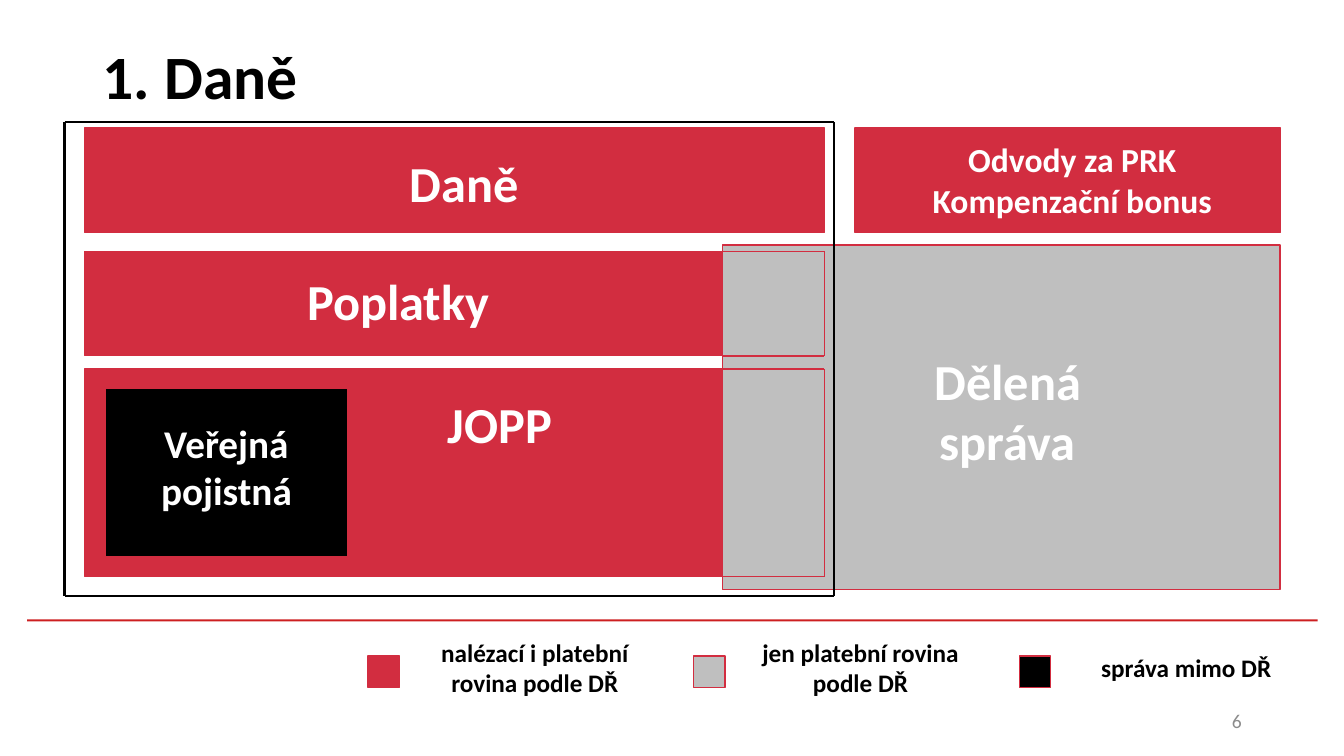
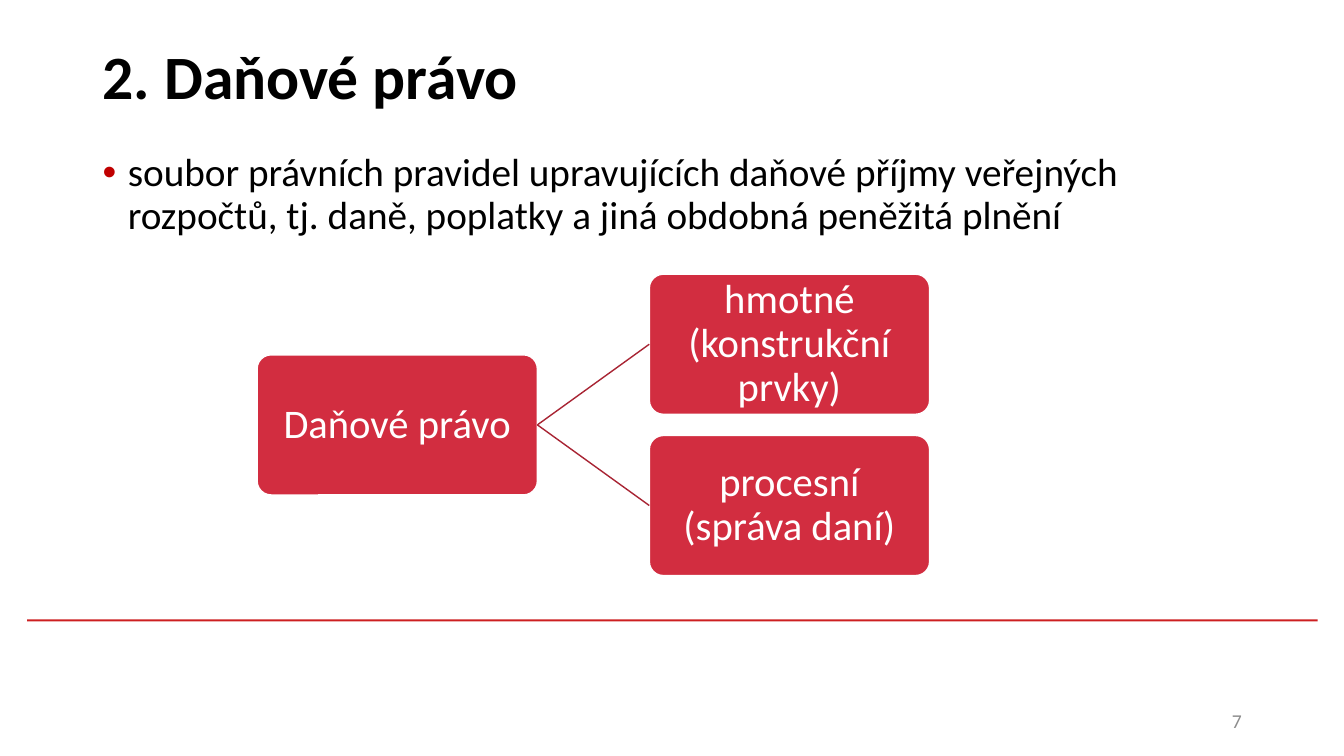
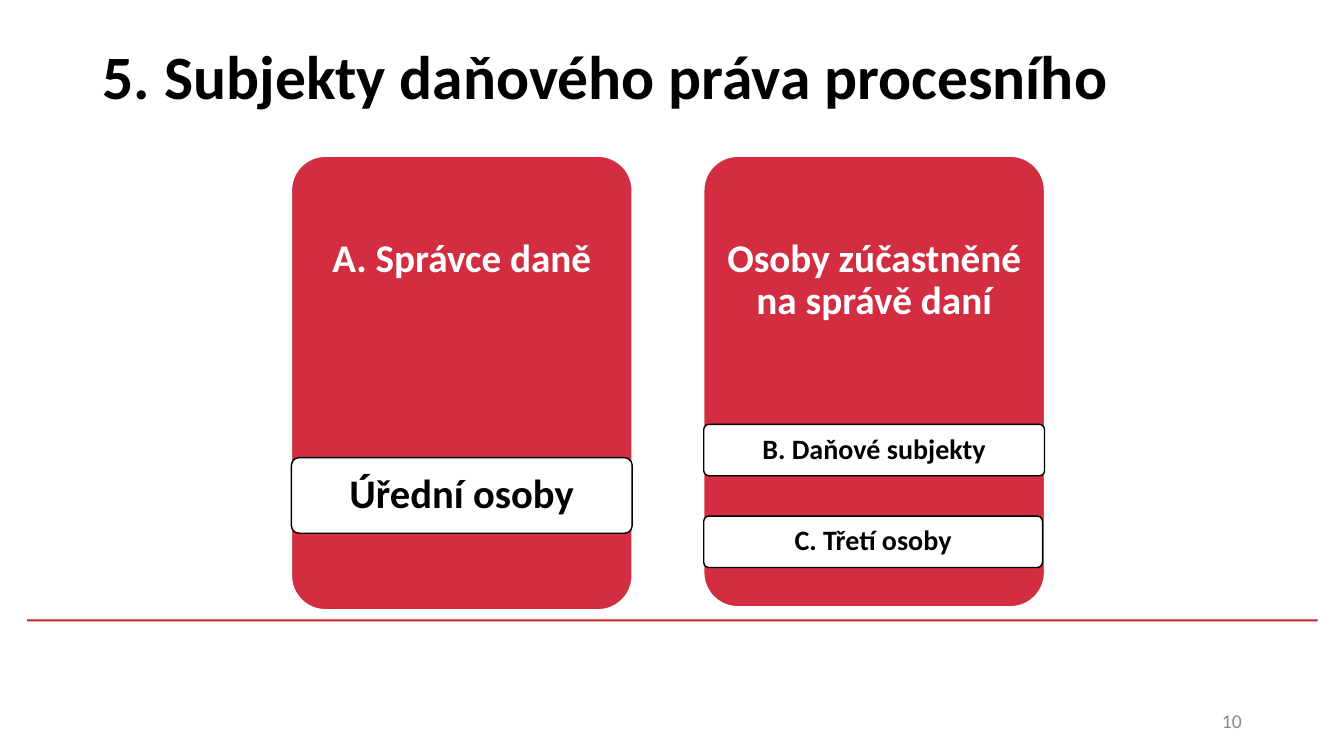
from lxml import etree
from pptx import Presentation, util as u
from pptx.dml.color import RGBColor
from pptx.enum import shapes, text
from pptx.oxml import ns

CELL = 0.1  # inches per grid column and row
RED, RULE, LINK = "D22D40", "CD1F21", "A82433"
GREY, BLACK, WHITE = "BFBFBF", "000000", "FFFFFF"
BULLET, NUMBER = "C00000", "8C8C8C"
RECT = shapes.MSO_SHAPE.RECTANGLE
ROUND = shapes.MSO_SHAPE.ROUNDED_RECTANGLE


def rgb(value):
    return RGBColor.from_string(value)


def cells(*counts):
    return [u.Inches(count * CELL) for count in counts]


def write(frame, content, size=28, color=WHITE, bold=False, align="CENTER",
          anchor="MIDDLE", spacing=None, insets=(1, 0.5, 1, 0.5), bullet=None):
    """Fill a text frame, one paragraph per line; insets run left, top, right, bottom."""
    frame.word_wrap = True
    frame.vertical_anchor = getattr(text.MSO_ANCHOR, anchor)
    (frame.margin_left, frame.margin_top,
     frame.margin_right, frame.margin_bottom) = cells(*insets)
    for index, line in enumerate(content.split("\n")):
        paragraph = frame.add_paragraph() if index else frame.paragraphs[0]
        paragraph.alignment = getattr(text.PP_ALIGN, align)
        if spacing:
            paragraph.line_spacing = spacing
        if bullet:
            add_bullet(paragraph, bullet)
        run = paragraph.add_run()
        run.text = line
        font = run.font
        font.name, font.size, font.bold = "Calibri", u.Pt(size), bold
        font.color.rgb = rgb(color)


def add_bullet(paragraph, color):
    properties = paragraph._p.get_or_add_pPr()
    properties.set("marL", str(u.Inches(0.25)))
    properties.set("indent", str(u.Inches(-0.25)))
    bullet_color = etree.SubElement(properties, ns.qn("a:buClr"))
    etree.SubElement(bullet_color, ns.qn("a:srgbClr"), val=color)
    etree.SubElement(properties, ns.qn("a:buFont"), typeface="Arial")
    etree.SubElement(properties, ns.qn("a:buChar"), char="•")


class Deck:
    """Shared style and the slide being built; places are in grid cells."""

    def __init__(self):
        self.file = Presentation()
        self.file.slide_width, self.file.slide_height = u.Inches(13.33), u.Inches(7.5)
        self.slide = None

    def start(self, title, number):
        """Open a slide with its rule, title and number."""
        self.slide = self.file.slides.add_slide(self.file.slide_layouts[6])
        self.box((2.7, 61.45, 128, 0.2), RULE)
        self.label((9.2, 0.2, 115, 14.5), title, size=44, color=BLACK, bold=True,
                   align="LEFT")
        self.label((94.15, 69.5, 30, 4), number, size=14, color=NUMBER, align="RIGHT")

    def box(self, place, fill, line=None, kind=RECT, content=None, **style):
        shape = self.slide.shapes.add_shape(kind, *cells(*place))
        shape.shadow.inherit = False
        if kind == ROUND:
            shape.adjustments[0] = 0.1
        shape.fill.solid()
        shape.fill.fore_color.rgb = rgb(fill)
        if line:
            shape.line.color.rgb = rgb(line)
            shape.line.width = u.Pt(1)
        else:
            shape.line.fill.background()
        if content:
            write(shape.text_frame, content, **style)
        return shape

    def label(self, place, content, **style):
        write(self.slide.shapes.add_textbox(*cells(*place)).text_frame, content, **style)

    def line(self, ends, color, width=1):
        """Draw a straight line; ends are left, top, right, bottom."""
        line = self.slide.shapes.add_connector(shapes.MSO_CONNECTOR.STRAIGHT, *cells(*ends))
        line.line.color.rgb = rgb(color)
        line.line.width = u.Pt(width)
        etree.SubElement(line._element.spPr, ns.qn("a:effectLst"))
        return line

    def outline(self, left, top, right, bottom, color, width=1):
        """Draw the four sides of an area as separate lines."""
        for ends in ((left, top, right, top), (right, top, right, bottom),
                     (left, bottom, right, bottom), (left, top, left, bottom)):
            self.line(ends, color, width)

    def link(self, parent, child):
        """Join the right side of parent to the left side of child."""
        line = self.line((0, 0, 0, 0), LINK)
        line.begin_connect(parent, 3)
        line.end_connect(child, 1)


def taxes(deck):
    deck.start("1. Daně", "6")
    split, inner_right = 71.65, 81.75
    rows = ((24.95, 35.3), (36.6, 57.2))
    deck.box((split, 24.3, 55.3, 34.2), GREY, RED)
    for top, bottom in rows:
        deck.box((8.4, top, split - 8.4, bottom - top), RED, RED)
    deck.box((8.4, 12.7, 73.4, 10.35), RED, RED)
    deck.box((84.8, 12.7, 42.2, 10.35), RED, RED)
    deck.box((10.4, 38.5, 24.1, 16.75), BLACK, RED)
    for place, content, size in (
            ((16.4, 14.55, 59.3, 7.1), "Daně", 36),
            ((16.4, 26.2, 46.2, 7.1), "Poplatky", 36),
            ((30.5, 38.45, 38.2, 7.1), "JOPP", 36),
            ((88.75, 13.25, 35.2, 9.1), "Odvody za PRK\nKompenzační bonus", 24),
            ((11.4, 41.1, 22.1, 10.4), "Veřejná pojistná", 28),
            ((85.35, 34.15, 29.2, 13.1), "Dělená správa", 36)):
        deck.label(place, content, size=size, bold=True)
    deck.outline(6.4, 12.1, 82.75, 59.15, BLACK, 1.5)
    for top, bottom in rows:
        deck.outline(split, top, inner_right, bottom, RED)

    legend = ((RED, "nalézací i platební rovina podle DŘ"),
              (GREY, "jen platební rovina podle DŘ"),
              (BLACK, "správa mimo DŘ"))
    for index, (fill, meaning) in enumerate(legend):
        left = 36.5 + 32.3 * index
        deck.box((left, 65.1, 3.1, 3.1), fill, RED)
        deck.label((left + 3.95, 62.65, 25.2, 7.1), meaning, size=18, color=BLACK,
                   bold=True)


def tax_law(deck):
    deck.start("2. Daňové právo", "7")
    deck.label((9.2, 14.7, 115, 45.7),
               "soubor právních pravidel upravujících daňové příjmy veřejných rozpočtů, "
               "tj. daně, poplatky a jiná obdobná peněžitá plnění",
               color=BLACK, align="LEFT", anchor="TOP", spacing=0.9, bullet=BULLET)

    def node(left, top, content):
        return deck.box((left, top, 27.8, 13.9), RED, WHITE, kind=ROUND, content=content,
                        size=29, spacing=0.9, insets=(0.2,) * 4)

    law = node(25.5, 35.2, "Daňové právo")
    for top, branch in ((27.2, "hmotné (konstrukční prvky)"),
                        (43.2, "procesní (správa daní)")):
        deck.link(law, node(64.4, top, branch))


def subjects(deck):
    deck.start("5. Subjekty daňového práva procesního", "10")
    groups = (
        (28.9, 45, "A. Správce daně", 29, 7.5, 1.2, ((45.4, 33.8, "Úřední osoby"),)),
        (69.8, 44.7, "Osoby zúčastněné na správě daní", 20, 5.1, 0.8,
         ((42.1, 33.8, "B. Daňové subjekty"), (51.2, 33.6, "C. Třetí osoby"))))
    for left, height, heading, size, member_height, inset, members in groups:
        deck.box((left, 15.5, 33.8, height), RED, WHITE, kind=ROUND, content=heading,
                 bold=True, anchor="TOP", spacing=0.9, insets=(1.2, 7.2, 1.2, 1.2))
        for top, width, member in members:
            deck.box((left, top, width, member_height), WHITE, BLACK, kind=ROUND,
                     content=member, size=size, color=BLACK, bold=True, spacing=0.9,
                     insets=(inset,) * 4)


def main():
    deck = Deck()
    for build in (taxes, tax_law, subjects):
        build(deck)
    deck.file.save("out.pptx")


if __name__ == "__main__":
    main()
